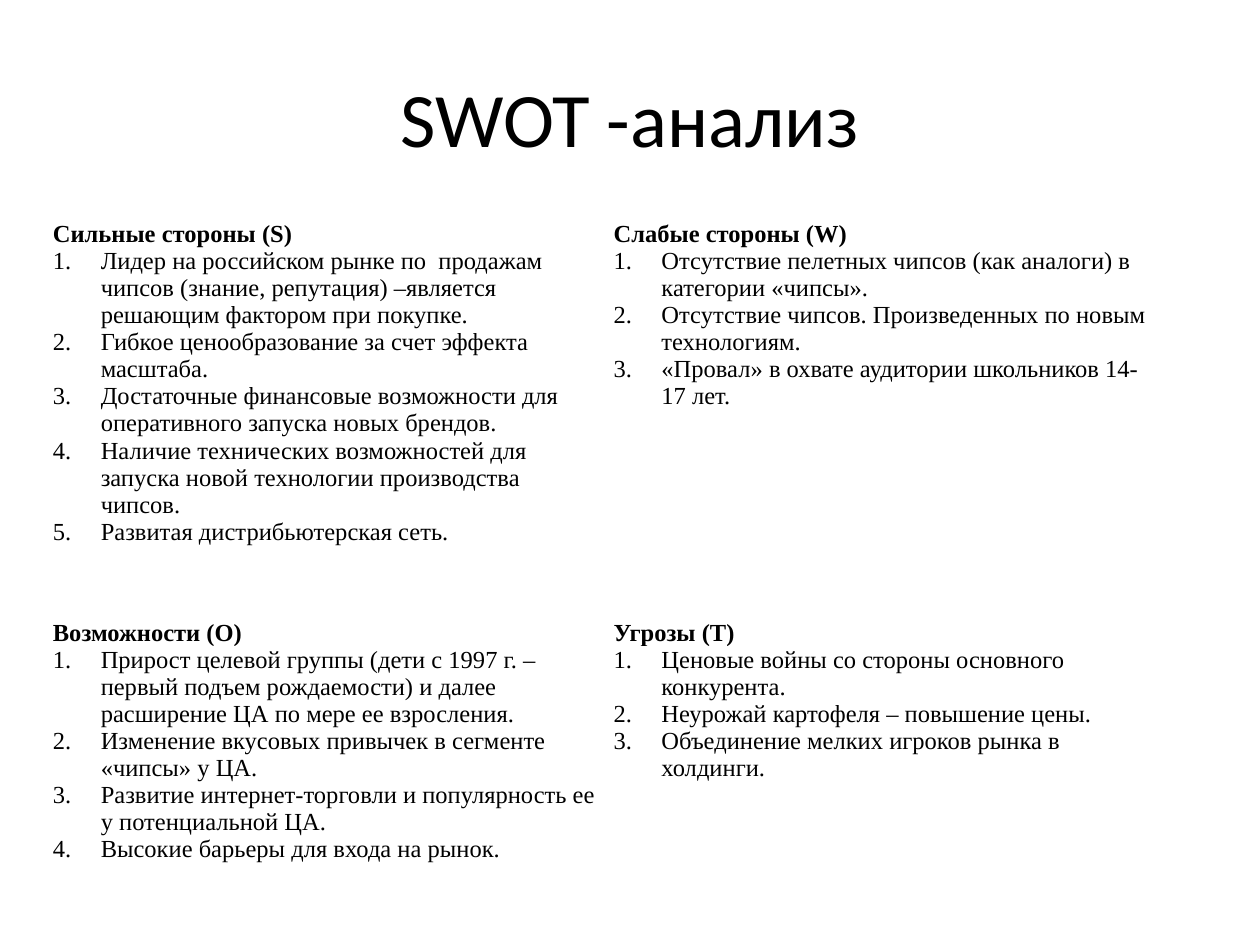
from dataclasses import dataclass

from lxml import etree
from pptx import Presentation
from pptx.dml.color import RGBColor
from pptx.enum.text import MSO_ANCHOR, PP_ALIGN
from pptx.oxml.ns import qn
from pptx.util import Inches, Pt

TOP, MIDDLE, BOTTOM = MSO_ANCHOR.TOP, MSO_ANCHOR.MIDDLE, MSO_ANCHOR.BOTTOM
CENTER = PP_ALIGN.CENTER
BLANK_LAYOUT = 6


@dataclass(frozen=True)
class Theme:
    ink: RGBColor = RGBColor(0, 0, 0)
    rule: str = "FFFFFF"
    title_font: str = "Calibri"
    body_font: str = "Times New Roman"
    title_size: int = 44
    body_size: int = 14


THEME = Theme()
SLIDE_WIDTH, SLIDE_HEIGHT = Inches(10), Inches(7.5)
GRID_LEFT, GRID_TOP = Inches(0.35), Inches(1.75)
COLUMN_WIDTH = Inches(4.45)
ROW_HEIGHTS = [Inches(height) for height in (2.95, 0.43, 2.13)]
LIST_INDENT = Inches(0.38)
CELL_FORMAT = {
    "margin_left": Inches(0.07), "margin_right": Inches(0.07),
    "margin_top": 0, "margin_bottom": 0,
}

STRENGTHS = ("Сильные стороны (S)", [
    "Лидер на российском рынке по  продажам чипсов (знание, репутация) "
    "–является решающим фактором при покупке.",
    "Гибкое ценообразование за счет эффекта масштаба.",
    "Достаточные финансовые возможности для оперативного запуска новых брендов.",
    "Наличие технических возможностей для запуска новой технологии "
    "производства чипсов.",
    "Развитая дистрибьютерская сеть.",
])
WEAKNESSES = ("Слабые стороны (W)", [
    "Отсутствие пелетных чипсов (как аналоги) в категории «чипсы».",
    "Отсутствие чипсов. Произведенных по новым технологиям.",
    "«Провал» в охвате аудитории школьников 14-17 лет.",
])
OPPORTUNITIES = ("Возможности (O)", [
    "Прирост целевой группы (дети с 1997 г. – первый подъем рождаемости) "
    "и далее расширение ЦА по мере ее взросления.",
    "Изменение вкусовых привычек в сегменте «чипсы» у ЦА.",
    "Развитие интернет-торговли и популярность ее у потенциальной ЦА.",
    "Высокие барьеры для входа на рынок.",
])
THREATS = ("Угрозы (T)", [
    "Ценовые войны со стороны основного конкурента.",
    "Неурожай картофеля – повышение цены.",
    "Объединение мелких игроков рынка в холдинги.",
])


def apply_format(target, values):
    for name, value in values.items():
        setattr(target, name, value)


def write_run(paragraph, text, font, size, bold=False):
    run = paragraph.add_run()
    run.text = text
    apply_format(run.font, {"name": font, "size": Pt(size), "bold": bold})
    run.font.color.rgb = THEME.ink


def number_paragraph(paragraph):
    properties = paragraph._p.get_or_add_pPr()
    properties.set("marL", str(LIST_INDENT))
    properties.set("indent", str(-LIST_INDENT))
    etree.SubElement(properties, qn("a:buFont"), typeface="+mj-lt")
    etree.SubElement(properties, qn("a:buAutoNum"), type="arabicPeriod")


def draw_borders(cell, bottom_width):
    properties = cell._tc.get_or_add_tcPr()
    widths = {"L": 1, "R": 1, "T": 1, "B": bottom_width}
    for side, width in widths.items():
        line = etree.SubElement(properties, qn(f"a:ln{side}"), w=str(Pt(width)))
        fill = etree.SubElement(line, qn("a:solidFill"))
        etree.SubElement(fill, qn("a:srgbClr"), val=THEME.rule)


def fill_cell(cell, heading=None, points=(), anchor=TOP, bottom_width=1):
    """Write an optional bold heading followed by a numbered list."""
    draw_borders(cell, bottom_width)
    cell.fill.background()
    apply_format(cell, {**CELL_FORMAT, "vertical_anchor": anchor})
    frame = cell.text_frame
    entries = [(heading, True)] if heading else []
    entries += [(point, False) for point in points]
    for index, (text, is_heading) in enumerate(entries):
        paragraph = frame.add_paragraph() if index else frame.paragraphs[0]
        if not is_heading:
            number_paragraph(paragraph)
        write_run(paragraph, text, THEME.body_font, THEME.body_size, is_heading)


def add_title(slide, text):
    box = slide.shapes.add_textbox(
        int(SLIDE_WIDTH * 0.05), int(SLIDE_HEIGHT * 0.04),
        int(SLIDE_WIDTH * 0.9), Inches(1.25))
    apply_format(box.text_frame, {"word_wrap": True, "vertical_anchor": MIDDLE})
    paragraph = box.text_frame.paragraphs[0]
    paragraph.alignment = CENTER
    write_run(paragraph, text, THEME.title_font, THEME.title_size)


def add_swot_table(slide, upper, lower):
    """Upper quadrants share one row; lower ones split heading from list."""
    table = slide.shapes.add_table(
        len(ROW_HEIGHTS), len(upper), GRID_LEFT, GRID_TOP,
        COLUMN_WIDTH * len(upper), sum(ROW_HEIGHTS)).table
    apply_format(table, {"first_row": False, "horz_banding": False})
    for row, height in zip(table.rows, ROW_HEIGHTS):
        row.height = height
    for column, (internal, external) in enumerate(zip(upper, lower)):
        table.columns[column].width = COLUMN_WIDTH
        heading, points = external
        fill_cell(table.cell(0, column), *internal, bottom_width=3)
        fill_cell(table.cell(1, column), heading, anchor=BOTTOM)
        fill_cell(table.cell(2, column), points=points)


def main():
    deck = Presentation()
    apply_format(deck, {"slide_width": SLIDE_WIDTH, "slide_height": SLIDE_HEIGHT})
    slide = deck.slides.add_slide(deck.slide_layouts[BLANK_LAYOUT])
    add_title(slide, "SWOT -анализ")
    add_swot_table(slide, (STRENGTHS, WEAKNESSES), (OPPORTUNITIES, THREATS))
    deck.save("out.pptx")


if __name__ == "__main__":
    main()
